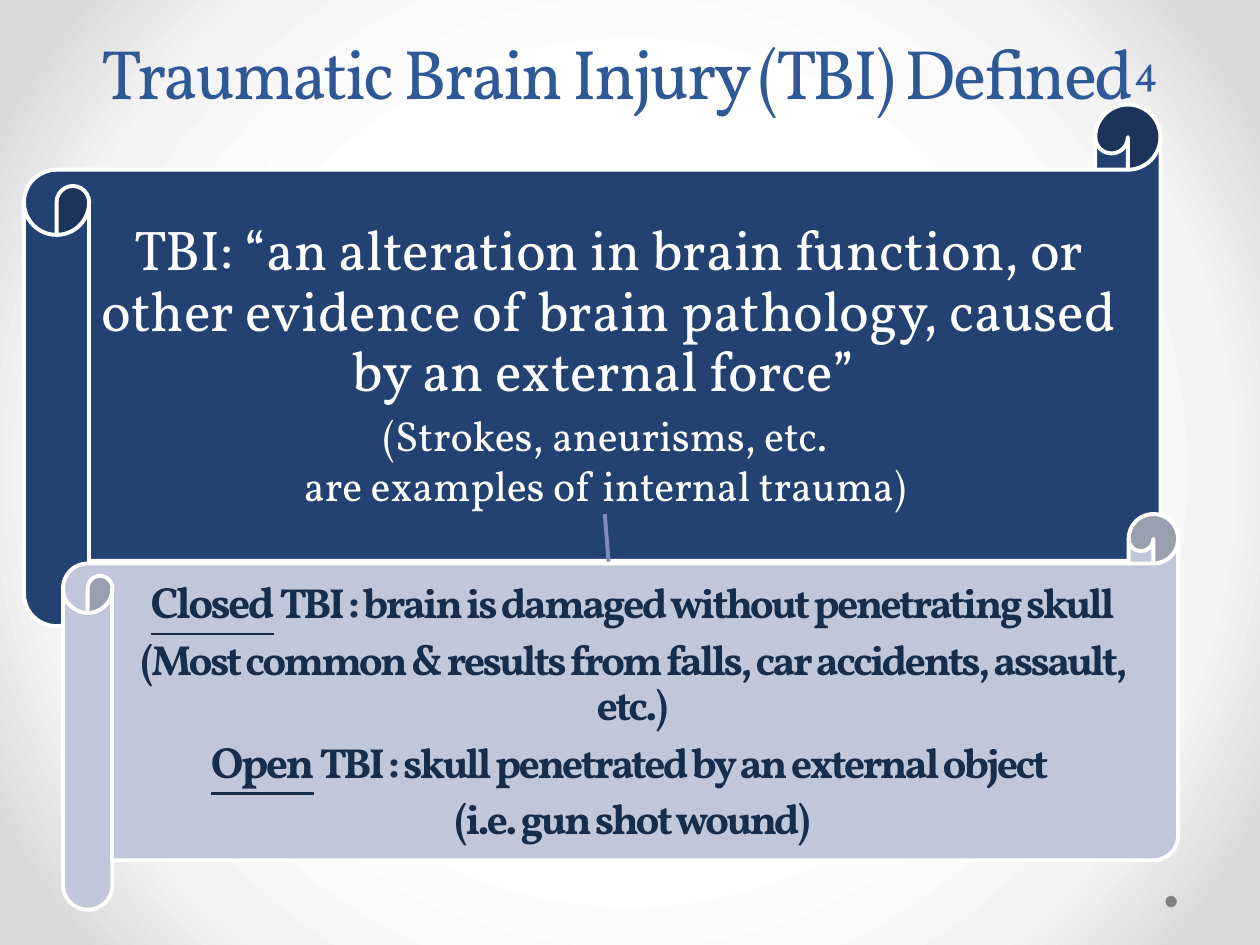
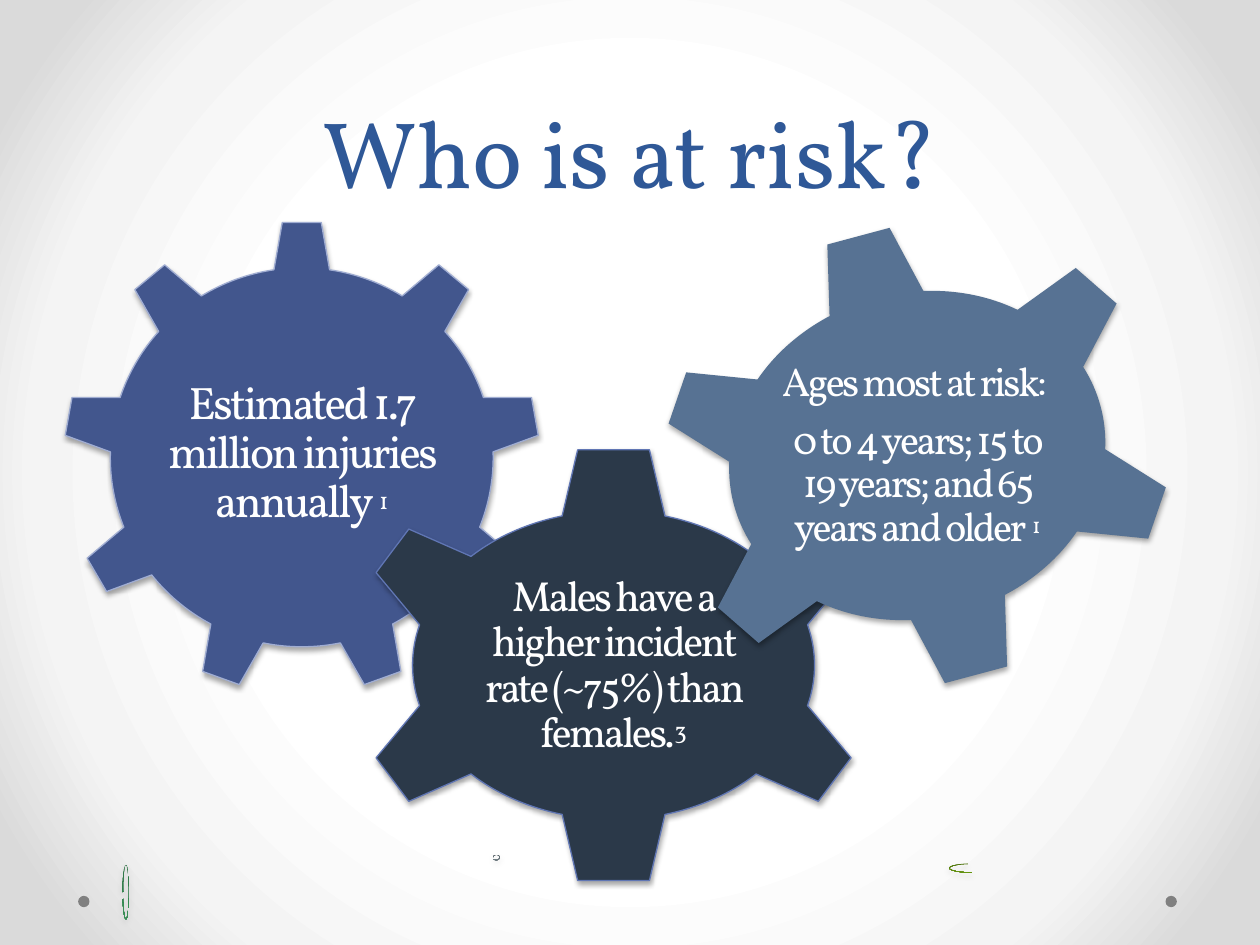
from lxml import etree
from pptx import Presentation
from pptx import util as u
from pptx.dml.color import RGBColor
from pptx.enum import shapes, text
from pptx.oxml.ns import qn

FONT = "Vollkorn"
WHITE = RGBColor(0xFF, 0xFF, 0xFF)
PALE_GREY = RGBColor(0xF4, 0xF4, 0xF4)
EDGE_GREY = RGBColor(0xDA, 0xDA, 0xDA)
DOT_GREY = RGBColor(0x80, 0x80, 0x80)
TITLE_BLUE = RGBColor(0x2F, 0x58, 0x97)
SCROLL_BLUE = RGBColor(0x23, 0x42, 0x71)
SCROLL_LILAC = RGBColor(0xC1, 0xC7, 0xDB)
INK = RGBColor(0x18, 0x2C, 0x4B)
LINK = RGBColor(0x7D, 0x8C, 0xBD)
GEAR_INDIGO = RGBColor(0x42, 0x56, 0x8D)
GEAR_NAVY = RGBColor(0x2B, 0x39, 0x49)
GEAR_STEEL = RGBColor(0x57, 0x72, 0x93)
INDIGO_EDGE = RGBColor(0xA0, 0xAD, 0xD2)
NAVY_EDGE = RGBColor(0x60, 0x76, 0xB4)
GREEN = [RGBColor(0x4D, 0x72, 0x0B), RGBColor(0x64, 0x94, 0x0F), RGBColor(0x65, 0x97, 0x0C)]
TEAL = [RGBColor(0x2B, 0x71, 0x42), RGBColor(0x38, 0x93, 0x56), RGBColor(0x36, 0x95, 0x56)]
GREY = [RGBColor(0x56, 0x60, 0x65), RGBColor(0x6F, 0x7D, 0x83), RGBColor(0x6F, 0x7E, 0x84)]

MSO = shapes.MSO_SHAPE


def write(tf, paragraphs, color=WHITE, size=24, bold=None, spc=-1.5, spacing=0.9,
          after=0.0, inset=0.1, anchor=text.MSO_ANCHOR.MIDDLE):
    """Fill a frame; a paragraph is a list of (text, overrides) runs.

    Overrides are size, spc, underline, raised and, on a first run, spacing.
    The space after a paragraph is a share of its first run's size.
    """
    tf.word_wrap = True
    tf.auto_size = text.MSO_AUTO_SIZE.NONE
    tf.vertical_anchor = anchor
    tf.margin_left = tf.margin_right = tf.margin_top = tf.margin_bottom = u.Inches(inset)
    for i, runs in enumerate(paragraphs):
        p = tf.add_paragraph() if i else tf.paragraphs[0]
        first = runs[0][1]
        p.alignment = text.PP_ALIGN.CENTER
        p.line_spacing = first.get("spacing", spacing)
        p.space_before = u.Pt(0)
        p.space_after = u.Pt(round(after * first.get("size", size), 1))
        for words, fmt in runs:
            r = p.add_run()
            r.text = words
            r.font.name, r.font.bold = FONT, bold
            r.font.size = u.Pt(fmt.get("size", size))
            r.font.color.rgb = color
            r.font.underline = fmt.get("underline")
            rPr = r._r.get_or_add_rPr()
            rPr.set("spc", str(round(100 * fmt.get("spc", spc))))
            if fmt.get("raised"):
                rPr.set("baseline", "20000")


def gradient(fill, stops, angle=None):
    """Set gradient stops (percent, colour): linear at an angle, else circular."""
    fill.gradient()
    grad = fill._xPr.find(qn("a:gradFill"))
    for child in list(grad):
        grad.remove(child)
    stop_list = etree.SubElement(grad, qn("a:gsLst"))
    for share, color in stops:
        stop = etree.SubElement(stop_list, qn("a:gs"), pos=str(share * 1000))
        etree.SubElement(stop, qn("a:srgbClr"), val=str(color))
    if angle is None:
        circle = etree.SubElement(grad, qn("a:path"), path="circle")
        etree.SubElement(circle, qn("a:fillToRect"), l="50000", t="50000", r="50000", b="50000")
    else:
        etree.SubElement(grad, qn("a:lin"), ang=str(angle * 60000), scaled="0")


prs = Presentation()
prs.slide_width, prs.slide_height = u.Inches(10), u.Inches(7.5)
gradient(prs.slide_master.background.fill, [(50, WHITE), (76, PALE_GREY), (92, EDGE_GREY)])

# Shared frame: title and footer dots
titles = [
    ((0.5, 0.17, 9, 0.83), 40, -1.5,
     [("Traumatic Brain Injury (TBI) Defined", {}), ("4", {"raised": True})]),
    ((0.5, 0, 9, 1.75), 54, 0, [("Who is at risk?", {})]),
]
for box, size, spc, runs in titles:
    s = prs.slides.add_slide(prs.slide_layouts[5])
    title = s.shapes.title
    title.left, title.top, title.width, title.height = map(u.Inches, box)
    write(title.text_frame, [runs], color=TITLE_BLUE, size=size, spc=spc,
          spacing=u.Pt(58), anchor=text.MSO_ANCHOR.BOTTOM)
    for left in (9.25, 0.62):
        dot = s.shapes.add_shape(MSO.OVAL, *map(u.Inches, (left, 7.11, 0.09, 0.09)))
        dot.shadow.inherit = False
        dot.fill.solid()
        dot.fill.fore_color.rgb = DOT_GREY
        dot.line.fill.background()
definition, risk = prs.slides

# Definition: two scrolls, with the link tucked behind the lower one
scrolls = [
    ((0.19, 0.83, 9.02, 4.14), SCROLL_BLUE, (0.71, 1.35, 8.25, 3.1),
     dict(after=0.35, inset=0.09, spc=0, spacing=0.7),
     [[("TBI: “an alteration in brain function, or other evidence of brain pathology, "
        "caused by an external force” ", {"size": 32, "spacing": 0.9})],
      [("(Strokes, aneurisms, etc. ", {})],
      [("are examples of internal trauma) ", {})]]),
    ((0.5, 4.08, 8.85, 3.14), SCROLL_LILAC, (0.89, 4.48, 8.26, 2.35),
     dict(after=0.25, inset=0.07, color=INK, bold=True),
     [[("Closed", {"size": 25, "underline": True}),
       (" TBI : brain is damaged without penetrating skull", {})],
      [("(Most common & results from falls, car accidents, assault, etc.)", {})],
      [("Open", {"size": 25, "underline": True}),
       (" TBI : skull penetrated by an external object ", {})],
      [("(i.e. gun shot wound)", {})]]),
]
for i, (box, color, text_box, fmt, paragraphs) in enumerate(scrolls):
    if i:
        link = definition.shapes.add_connector(
            shapes.MSO_CONNECTOR.STRAIGHT, *map(u.Inches, (4.87, 4.97, 4.8, 4.08)))
        link.line.color.rgb = LINK
        link.line.width = u.Pt(2.25)
        etree.SubElement(link._element.spPr, qn("a:effectLst"))
    scroll = definition.shapes.add_shape(MSO.HORIZONTAL_SCROLL, *map(u.Inches, box))
    scroll.shadow.inherit = False
    scroll.fill.solid()
    scroll.fill.fore_color.rgb = color
    scroll.line.color.rgb = WHITE
    scroll.line.width = u.Pt(2.25)
    tb = definition.shapes.add_textbox(*map(u.Inches, text_box))
    write(tb.text_frame, paragraphs, **fmt)

# Risk: three gears
gears = [
    (MSO.GEAR_9, (0.5, 1.75, 3.79, 3.76), 0, GEAR_INDIGO, INDIGO_EDGE, (1.26, 2.63, 2.27, 1.94), 26,
     [[("Estimated 1.7 million injuries annually ", {}), ("1", {"size": 24, "raised": True})]]),
    (MSO.GEAR_6, (2.75, 3.53, 4.24, 3.5), 0, GEAR_NAVY, NAVY_EDGE, (3.74, 4.42, 2.26, 1.73), 24,
     [[("Males have a higher incident rate (~75%) than females.", {}), ("3", {"raised": True})]]),
    (MSO.GEAR_6, (5.22, 1.77, 4.12, 3.69), 345, GEAR_STEEL, None, (6.15, 2.56, 2.26, 2.12), 23,
     [[("Ages most at risk: ", {})],
      [("0 to 4 years; 15 to 19 years; and 65 years and older ", {}),
       ("1", {"size": 22, "raised": True})]]),
]
shadowed = []
for preset, box, turn, color, edge, text_box, size, paragraphs in gears:
    gear = risk.shapes.add_shape(preset, *map(u.Inches, box))
    gear.rotation = turn
    gear.fill.solid()
    gear.fill.fore_color.rgb = color
    if edge is None:
        gear.line.fill.background()
    else:
        gear.line.color.rgb = edge
        gear.line.width = u.Pt(0.75)
    shadowed.append(gear)
    tb = risk.shapes.add_textbox(*map(u.Inches, text_box))
    write(tb.text_frame, paragraphs, size=size, after=0.35, inset=0.03)

# Small turning arrows below the gears
arrows = [
    (MSO.CIRCULAR_ARROW, (7.53, 6.85, 0.37, 0.08), ("flipH", "flipV"),
     (0.05, 2.99, 25.3, 158.31, 0.06), GREEN),
    (MSO.CIRCULAR_ARROW, (0.97, 6.86, 0.06, 0.44), ("flipV",),
     (0.07, 4.3, 104.89, 148.38, 0.08), TEAL),
    (MSO.LEFT_CIRCULAR_ARROW, (3.91, 6.78, 0.06, 0.05), ("flipV",),
     (0.06, 3.94, 133.14, 105.08, 0.07), GREY),
]
for preset, box, flips, adjustments, colors in arrows:
    arrow = risk.shapes.add_shape(preset, *map(u.Inches, box))
    for i, value in enumerate(adjustments):
        arrow.adjustments[i] = value
    for flip in flips:
        arrow._element.spPr.xfrm.set(flip, "1")
    gradient(arrow.fill, zip((0, 80, 100), colors), angle=270)
    arrow.line.fill.background()
    shadowed.append(arrow)

for sp in shadowed:
    sp.shadow.inherit = False
    effects = sp._element.spPr.find(qn("a:effectLst"))
    shade = etree.SubElement(effects, qn("a:outerShdw"), blurRad=str(u.Pt(3.1)),
                             dist=str(u.Pt(1.8)), dir="5400000", rotWithShape="0")
    black = etree.SubElement(shade, qn("a:srgbClr"), val="000000")
    etree.SubElement(black, qn("a:alpha"), val="35000")

prs.save("out.pptx")
